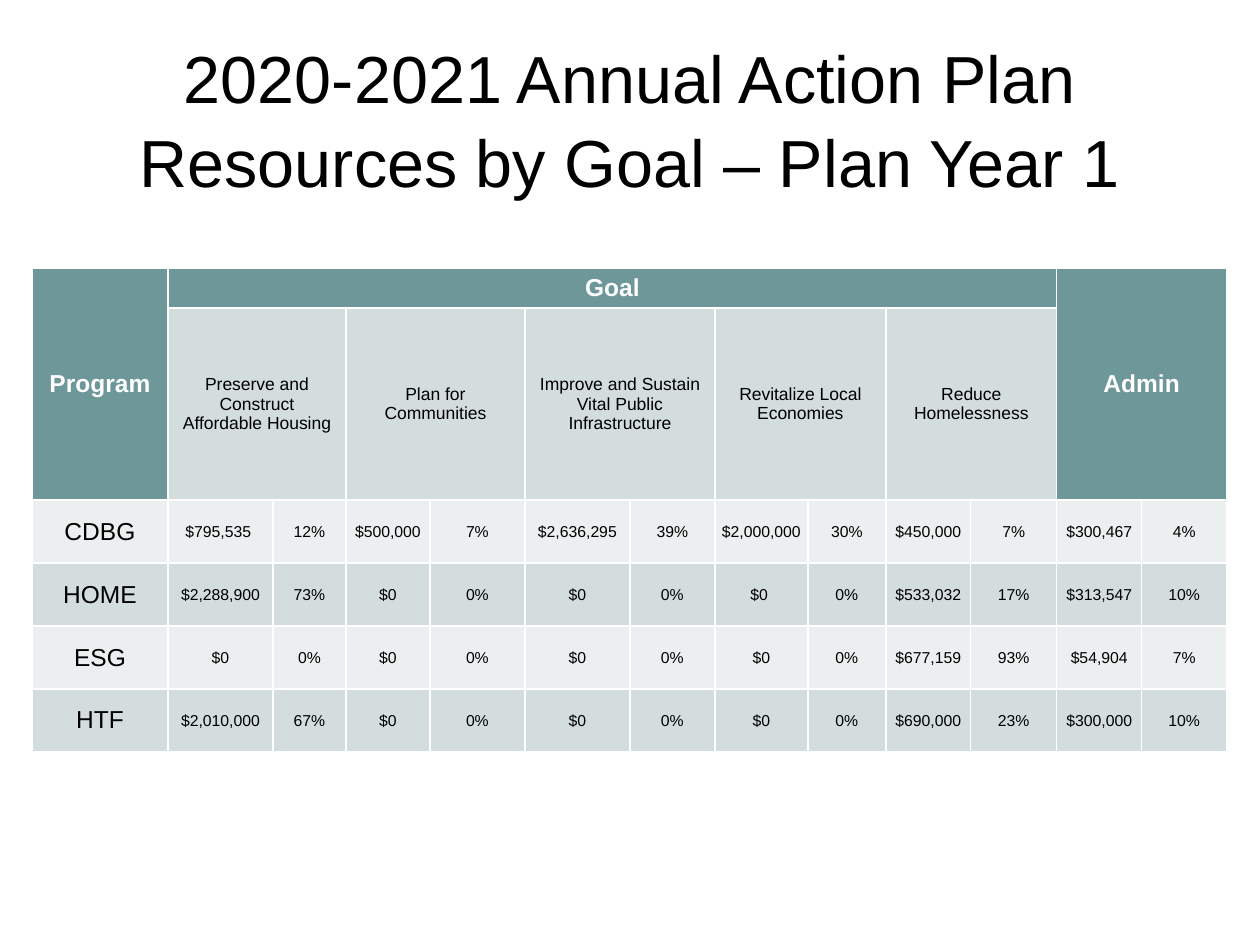
from pptx import Presentation
from pptx.dml.color import RGBColor
from pptx.enum.text import MSO_ANCHOR, PP_ALIGN
from pptx.util import Pt

PX = 914400 // 126
TEAL, MIST, PALE = "6D9799", "D4DDDE", "EBEFEF"
WHITE, BLACK = "FFFFFF", "000000"

COLUMNS = [136, 105, 73, 84, 95, 105, 85, 93, 78, 85, 86, 85, 85]
ROWS = [40, 192, 63, 63, 63, 63]
GOALS = [
    "Preserve and Construct Affordable Housing",
    "Plan for Communities",
    "Improve and Sustain Vital Public Infrastructure",
    "Revitalize Local Economies",
    "Reduce Homelessness",
]
PROGRAMS = [
    ["CDBG", "$795,535 ", "12%", "$500,000", "7%", "$2,636,295", "39%",
     "$2,000,000", "30%", "$450,000", "7%", "$300,467", "4%"],
    ["HOME", "$2,288,900", "73%", "$0", "0%", "$0", "0%",
     "$0 ", "0%", "$533,032", "17%", "$313,547", "10%"],
    ["ESG", "$0", "0%", "$0", "0%", "$0", "0%",
     "$0", "0%", "$677,159", "93%", "$54,904", "7%"],
    ["HTF", "$2,010,000", "67%", "$0", "0%", "$0", "0%",
     "$0", "0%", "$690,000", "23%", "$300,000", "10%"],
]
HEADER = {"size": Pt(14), "bold": True, "name": "Arial"}
GOAL = {"size": Pt(10), "bold": False, "name": "Arial"}
PROGRAM = {"size": Pt(14), "bold": False, "name": "Arial"}
AMOUNT = {"size": Pt(9), "bold": False, "name": "Arial"}
TITLE = {"size": Pt(38), "name": "Arial"}


def write(tf, text, color, font):
    tf.text = text
    for p in tf.paragraphs:
        p.alignment = PP_ALIGN.CENTER
        for r in p.runs:
            r.font.color.rgb = RGBColor.from_string(color)
            for name, value in font.items():
                setattr(r.font, name, value)


def fill_cell(cell, text, fill, color, font):
    cell.fill.solid()
    cell.fill.fore_color.rgb = RGBColor.from_string(fill)
    cell.vertical_anchor = MSO_ANCHOR.MIDDLE
    write(cell.text_frame, text, color, font)


prs = Presentation()
prs.slide_width, prs.slide_height = 1260 * PX, 945 * PX
slide = prs.slides.add_slide(prs.slide_layouts[5])

title = slide.shapes.title
title.left, title.top, title.width, title.height = 63 * PX, 38 * PX, 1134 * PX, 158 * PX
tf = title.text_frame
tf.vertical_anchor = MSO_ANCHOR.MIDDLE
write(tf, "2020-2021 Annual Action Plan\vResources by Goal – Plan Year 1", BLACK, TITLE)
tf.paragraphs[0].line_spacing = 1.05

frame = slide.shapes.add_table(len(ROWS), len(COLUMNS), 32 * PX, 268 * PX,
                               sum(COLUMNS) * PX, sum(ROWS) * PX)
table = frame.table
for column, width in zip(table.columns, COLUMNS):
    column.width = width * PX
for row, height in zip(table.rows, ROWS):
    row.height = height * PX

# Header cells: text, first column, last row, last column
for text, first, last_row, last in [("Program", 0, 1, 0), ("Goal", 1, 0, 10), ("Admin", 11, 1, 12)]:
    cell = table.cell(0, first)
    cell.merge(table.cell(last_row, last))
    fill_cell(cell, text, TEAL, WHITE, HEADER)

for i, goal in enumerate(GOALS):
    cell = table.cell(1, 1 + 2 * i)
    cell.merge(table.cell(1, 2 + 2 * i))
    fill_cell(cell, goal, MIST, BLACK, GOAL)

for i, values in enumerate(PROGRAMS):
    fill = MIST if i % 2 else PALE
    for j, text in enumerate(values):
        cell = table.cell(i + 2, j)
        fill_cell(cell, text, fill, BLACK, AMOUNT if j else PROGRAM)
        if j:
            cell.margin_left = cell.margin_right = 5 * PX
            cell.margin_top = cell.margin_bottom = 0
            cell.text_frame.paragraphs[0].line_spacing = 1.07

prs.save("out.pptx")
